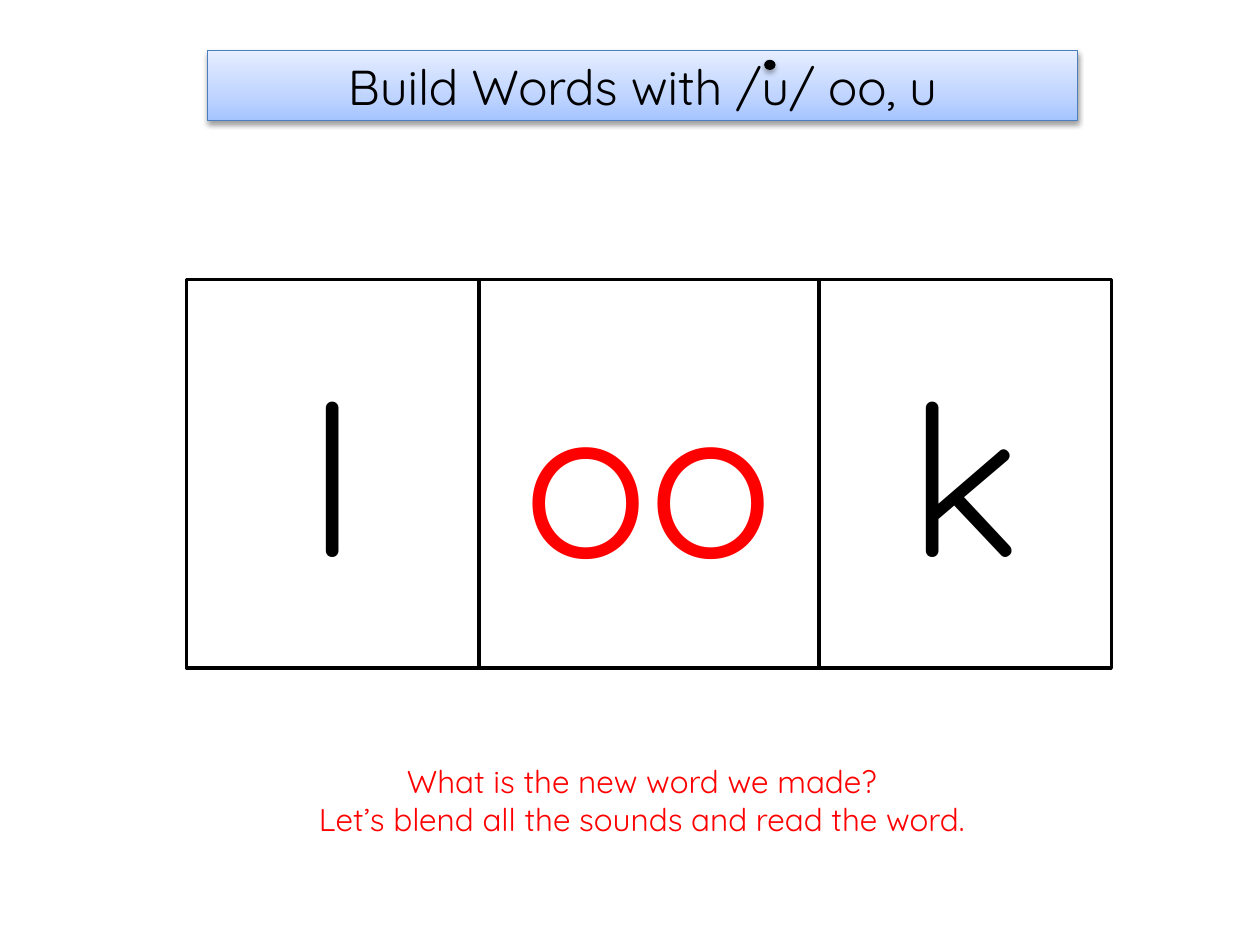
from copy import deepcopy
from dataclasses import dataclass

from pptx import Presentation
from pptx.dml.color import RGBColor as Rgb
from pptx.enum.shapes import MSO_SHAPE as Preset
from pptx.enum.text import MSO_ANCHOR as Anchor, MSO_AUTO_SIZE as AutoSize, PP_ALIGN as Align
from pptx.oxml.ns import qn
from pptx.oxml.xmlchemy import OxmlElement
from pptx.shapes.autoshape import Shape
from pptx.slide import Slide
from pptx.text.text import TextFrame
from pptx.util import Inches, Pt


@dataclass(frozen=True)
class Theme:
    font: str = "Quicksand"
    black: str = "000000"
    white: str = "FFFFFF"
    red: str = "FF0000"
    banner_line: str = "4B7EBC"
    banner_stops: tuple[tuple[float, str], ...] = ((0, "A4C4FF"), (0.35, "BFD4FF"), (1, "E6EEFF"))
    letter_size: int = 120
    title_size: int = 28
    prompt_size: int = 18
    box_line: float = 2
    thin_line: float = 0.75


@dataclass(frozen=True)
class Area:
    left: float
    top: float
    width: float
    height: float

    def lengths(self) -> tuple[Inches, ...]:
        return tuple(Inches(n) for n in (self.left, self.top, self.width, self.height))


@dataclass(frozen=True)
class SoundBox:
    letters: str
    width: float
    color: str


THEME = Theme()
SOUND_BOXES = (
    SoundBox("l", 2.32, THEME.black),
    SoundBox("oo", 2.7, THEME.red),
    SoundBox("k", 2.32, THEME.black),
)
BOXES_LEFT, BOXES_TOP, BOXES_HEIGHT = 1.48, 2.22, 3.08
PROMPT = ("What is the new word we made?", "Let’s blend all the sounds and read the word.")


def write_lines(frame: TextFrame, lines: tuple[str, ...], size: int, color: str) -> None:
    frame.word_wrap = True
    for index, line in enumerate(lines):
        para = frame.add_paragraph() if index else frame.paragraphs[0]
        para.alignment = Align.CENTER
        span = para.add_run()
        span.text = line
        span.font.name = THEME.font
        span.font.size = Pt(size)
        span.font.color.rgb = Rgb.from_string(color)


def add_outlined(page: Slide, preset: Preset, area: Area, fill: str, line: str, weight: float) -> Shape:
    shape = page.shapes.add_shape(preset, *area.lengths())
    shape.fill.solid()
    shape.fill.fore_color.rgb = Rgb.from_string(fill)
    shape.line.color.rgb = Rgb.from_string(line)
    shape.line.width = Pt(weight)
    shape.shadow.inherit = False
    shape.text_frame.vertical_anchor = Anchor.MIDDLE
    return shape


def add_shadow(shape: Shape, opacity: int, blur: float, distance: float) -> None:
    shadow = OxmlElement("a:outerShdw")
    settings = {"blurRad": Pt(blur), "dist": Pt(distance), "dir": 90 * 60000, "rotWithShape": 0}
    for name, value in settings.items():
        shadow.set(name, str(int(value)))
    color = OxmlElement("a:srgbClr")
    color.set("val", THEME.black)
    alpha = OxmlElement("a:alpha")
    alpha.set("val", str(opacity * 1000))
    color.append(alpha)
    shadow.append(color)
    shape.element.spPr.find(qn("a:effectLst")).append(shadow)


def fill_gradient(shape: Shape, stops: tuple[tuple[float, str], ...]) -> None:
    shape.fill.gradient()
    shape.fill.gradient_angle = 90
    stop_list = shape.element.spPr.find(qn("a:gradFill")).find(qn("a:gsLst"))
    while len(stop_list) < len(stops):
        stop_list.append(deepcopy(stop_list[0]))
    for stop, (position, color) in zip(shape.fill.gradient_stops, stops):
        stop.position = position
        stop.color.rgb = Rgb.from_string(color)


def add_sound_boxes(page: Slide) -> None:
    left = BOXES_LEFT
    for sound in SOUND_BOXES:
        area = Area(left, BOXES_TOP, sound.width, BOXES_HEIGHT)
        box = add_outlined(page, Preset.RECTANGLE, area, THEME.white, THEME.black, THEME.box_line)
        write_lines(box.text_frame, (sound.letters,), THEME.letter_size, sound.color)
        left += sound.width


def add_prompt(page: Slide) -> None:
    box = page.shapes.add_textbox(*Area(1.61, 6, 6.97, 0.71).lengths())
    write_lines(box.text_frame, PROMPT, THEME.prompt_size, THEME.red)
    box.text_frame.auto_size = AutoSize.SHAPE_TO_FIT_TEXT


def add_title(page: Slide) -> None:
    banner = add_outlined(page, Preset.RECTANGLE, Area(1.65, 0.4, 6.9, 0.56),
                          THEME.white, THEME.banner_line, THEME.thin_line)
    fill_gradient(banner, THEME.banner_stops)
    add_shadow(banner, 38, 3.1, 1.6)
    write_lines(banner.text_frame, ("Build Words with /u/ oo, u",), THEME.title_size, THEME.black)
    dot = add_outlined(page, Preset.OVAL, Area(6.07, 0.48, 0.08, 0.07),
                       THEME.black, THEME.black, THEME.thin_line)
    add_shadow(dot, 35, 3.1, 1.8)


def main() -> None:
    deck = Presentation()
    deck.slide_width, deck.slide_height = Inches(10), Inches(7.5)
    page = deck.slides.add_slide(deck.slide_layouts[6])
    add_sound_boxes(page)
    add_prompt(page)
    add_title(page)
    deck.save("out.pptx")


if __name__ == "__main__":
    main()
